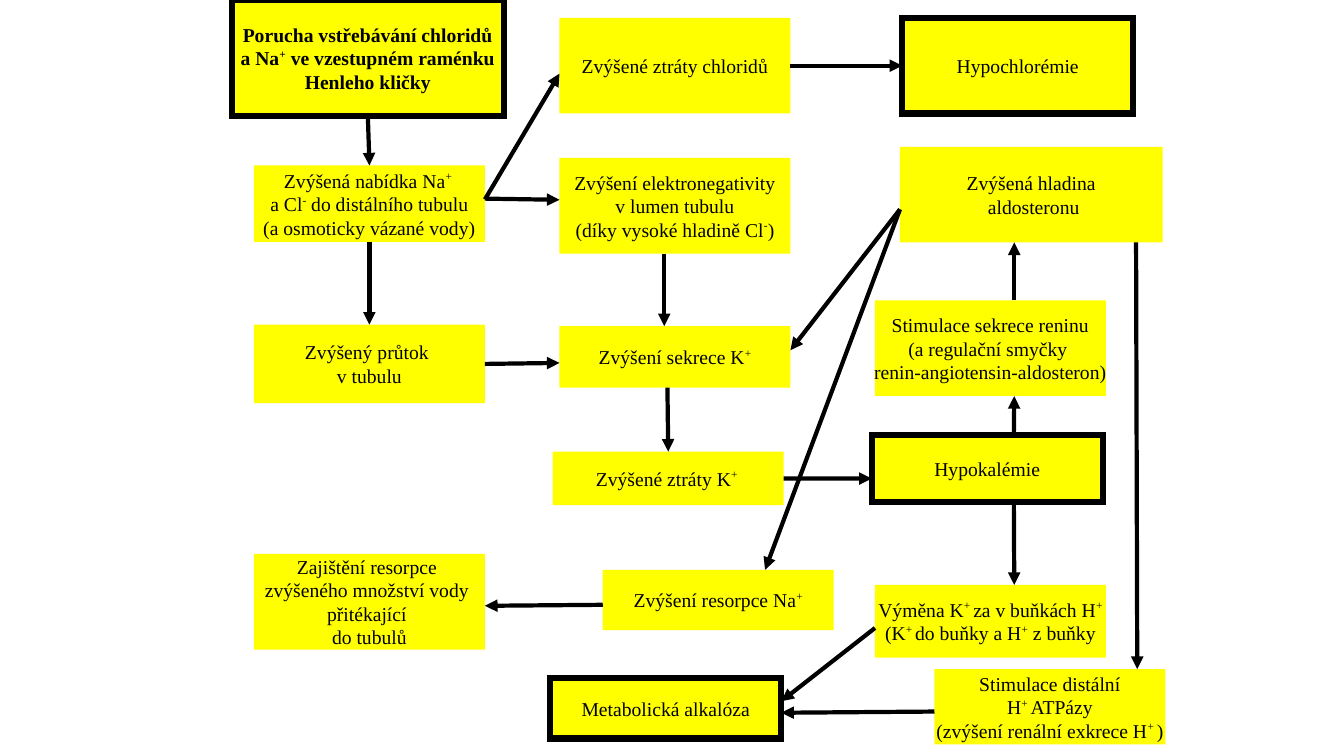
from dataclasses import dataclass

import pptx
import pptx.dml.color
import pptx.enum.shapes
import pptx.enum.text
import pptx.oxml
import pptx.oxml.ns
import pptx.util
from pptx.util import Cm


@dataclass(frozen=True)
class Theme:
    fill: pptx.dml.color.RGBColor = pptx.dml.color.RGBColor(0xFF, 0xFF, 0x00)
    ink: pptx.dml.color.RGBColor = pptx.dml.color.RGBColor(0x00, 0x00, 0x00)
    font: str = "Times New Roman"
    size: pptx.util.Length = pptx.util.Pt(14)
    border: pptx.util.Length = pptx.util.Pt(4.5)
    arrow: pptx.util.Length = pptx.util.Pt(3)
    superscript: str = "38000"


@dataclass(frozen=True)
class Box:
    """A region in centimetres."""
    left: float
    top: float
    width: float
    height: float


@dataclass(frozen=True)
class Node:
    """A step of the chain; top and shift count from its column, ^ encloses superscripts."""
    name: str
    text: str
    top: float
    height: float
    shift: float = 0
    width: float = 5.82
    outlined: bool = False
    bold: bool = False


THEME = Theme()
TOP, LEFT, BOTTOM, RIGHT = range(4)

COLUMNS = [
    (Box(6.4, 0, 5.82, 19.05), [
        Node("disorder", "Porucha vstřebávání chloridů\n a Na^+^ ve vzestupném raménku \nHenleho kličky",
             0, 2.92, shift=-0.56, width=6.86, outlined=True, bold=True),
        Node("supply", "Zvýšená nabídka Na^+ ^\na Cl^-^ do distálního tubulu\n(a osmoticky vázané vody)",
             4.17, 1.93),
        Node("flow", "Zvýšený průtok \nv tubulu", 8.18, 1.98),
        Node("water", "Zajištění resorpce \nzvýšeného množství vody \npřitékající \ndo tubulů", 13.96, 2.41),
    ]),
    (Box(14.1, 0, 5.82, 19.05), [
        Node("chloride loss", "Zvýšené ztráty chloridů", 0.45, 2.41),
        Node("electronegativity", "Zvýšení elektronegativity\n v lumen tubulu \n(díky vysoké hladině Cl^-^)",
             3.98, 2.41),
        Node("secretion", "Zvýšení sekrece K^+^", 8.22, 1.55),
        Node("potassium loss", "Zvýšené ztráty K^+ ^", 11.38, 1.35, shift=-0.17),
        Node("resorption", "Zvýšení resorpce Na^+^", 14.36, 1.52, shift=1.09),
        Node("alkalosis", "Metabolická alkalóza", 17.09, 1.52, shift=-0.23, outlined=True),
    ]),
    (Box(22.05, 0, 5.82, 19.05), [
        Node("hypochloremia", "Hypochlorémie", 0.45, 2.41, shift=0.69, outlined=True),
        Node("aldosterone", "Zvýšená hladina\n aldosteronu", 3.7, 2.41, shift=0.63, width=6.62),
        Node("renin", "Stimulace sekrece reninu\n(a regulační smyčky \nrenin-angiotensin-aldosteron)",
             7.57, 2.41),
        Node("hypokalemia", "Hypokalémie", 10.97, 1.68, shift=-0.08, outlined=True),
        Node("exchange", "Výměna K^+ ^za v buňkách H^+^\n(K^+ ^do buňky a H^+^ z buňky", 14.74, 1.83),
        Node("ATPase", "Stimulace distální\n H^+ ^ATPázy \n(zvýšení renální exkrece H^+ ^)",
             16.86, 1.9, shift=1.5),
    ]),
]

# Each end: node, side, distance in cm from the middle of that side.
ARROWS = [
    (("disorder", BOTTOM, 0), ("supply", TOP, 0)),
    (("supply", BOTTOM, 0), ("flow", TOP, 0)),
    (("supply", RIGHT, -0.11), ("chloride loss", LEFT, 0.2)),
    (("supply", RIGHT, -0.13), ("electronegativity", LEFT, -0.15)),
    (("flow", RIGHT, 0), ("secretion", LEFT, 0.15)),
    (("chloride loss", RIGHT, 0), ("hypochloremia", LEFT, 0)),
    (("electronegativity", BOTTOM, -0.27), ("secretion", TOP, -0.27)),
    (("secretion", BOTTOM, -0.19), ("potassium loss", TOP, 0)),
    (("potassium loss", RIGHT, 0), ("hypokalemia", LEFT, 0.25)),
    (("hypokalemia", TOP, 0.67), ("renin", BOTTOM, 0.6)),
    (("hypokalemia", BOTTOM, 0.67), ("exchange", TOP, 0.6)),
    (("renin", TOP, 0.6), ("aldosterone", BOTTOM, -0.43)),
    (("aldosterone", LEFT, 0.37), ("secretion", RIGHT, -0.17)),
    (("aldosterone", LEFT, 0.37), ("resorption", TOP, 1.18)),
    (("aldosterone", BOTTOM, 2.64), ("ATPase", TOP, 2.2)),
    (("resorption", LEFT, 0.12), ("water", RIGHT, 0.1)),
    (("exchange", LEFT, 0.17), ("alkalosis", RIGHT, -0.18)),
    (("ATPase", LEFT, 0.12), ("alkalosis", RIGHT, 0.11)),
]


def write_line(paragraph, text, bold):
    """Write one centred line, raising the parts enclosed in ^."""
    paragraph.alignment = pptx.enum.text.PP_ALIGN.CENTER
    for index, part in enumerate(text.split("^")):
        if not part:
            continue
        run = paragraph.add_run()
        run.text = part
        run.font.name = THEME.font
        run.font.size = THEME.size
        run.font.bold = bold
        run.font.color.rgb = THEME.ink
        if index % 2:
            run.font._element.set("baseline", THEME.superscript)


def add_line_detail(shape, tag):
    """Append one drawing element to the outline of a shape or connector."""
    outline = shape._element.spPr.find(pptx.oxml.ns.qn("a:ln"))
    outline.append(pptx.oxml.parse_xml(f'<a:{tag} {pptx.oxml.ns.nsdecls("a")}/>'.replace("=@", "=")))
    return outline[-1]


def add_node(slide, column, node):
    shape = slide.shapes.add_shape(
        pptx.enum.shapes.MSO_SHAPE.RECTANGLE,
        Cm(column.left + node.shift), Cm(column.top + node.top), Cm(node.width), Cm(node.height))
    shape.shadow.inherit = False
    shape.fill.solid()
    shape.fill.fore_color.rgb = THEME.fill
    if node.outlined:
        shape.line.color.rgb = THEME.ink
        shape.line.width = THEME.border
        add_line_detail(shape, "miter")
    else:
        shape.line.fill.background()
    frame = shape.text_frame
    frame.word_wrap = False
    frame.vertical_anchor = pptx.enum.text.MSO_ANCHOR.MIDDLE
    for index, line in enumerate(node.text.split("\n")):
        paragraph = frame.add_paragraph() if index else frame.paragraphs[0]
        write_line(paragraph, line, node.bold)
    return shape


def add_column(slide, column, nodes):
    return {node.name: add_node(slide, column, node) for node in nodes}


def side_point(shape, side, offset):
    """Return the point at the given distance from the middle of a side."""
    if side in (TOP, BOTTOM):
        y = shape.top + (shape.height if side == BOTTOM else 0)
        return shape.left + shape.width // 2 + Cm(offset), y
    x = shape.left + (shape.width if side == RIGHT else 0)
    return x, shape.top + shape.height // 2 + Cm(offset)


def add_arrow(slide, shapes, start, end):
    """Draw an arrow, joined to its boxes wherever it meets the middle of a side."""
    (start_name, start_side, start_offset), (end_name, end_side, end_offset) = start, end
    source, target = shapes[start_name], shapes[end_name]
    connector = slide.shapes.add_connector(
        pptx.enum.shapes.MSO_CONNECTOR.STRAIGHT,
        *side_point(source, start_side, start_offset), *side_point(target, end_side, end_offset))
    if not start_offset:
        connector.begin_connect(source, start_side)
    if not end_offset:
        connector.end_connect(target, end_side)
    connector.line.color.rgb = THEME.ink
    connector.line.width = THEME.arrow
    add_line_detail(connector, "tailEnd").set("type", "triangle")
    connector._element.spPr.append(
        pptx.oxml.parse_xml(f'<a:effectLst {pptx.oxml.ns.nsdecls("a")}/>'))


def main():
    presentation = pptx.Presentation()
    presentation.slide_width = Cm(33.87)
    presentation.slide_height = Cm(19.05)
    slide = presentation.slides.add_slide(presentation.slide_layouts[6])
    shapes = {}
    for column, nodes in COLUMNS:
        shapes.update(add_column(slide, column, nodes))
    for start, end in ARROWS:
        add_arrow(slide, shapes, start, end)
    presentation.save("out.pptx")


if __name__ == "__main__":
    main()
